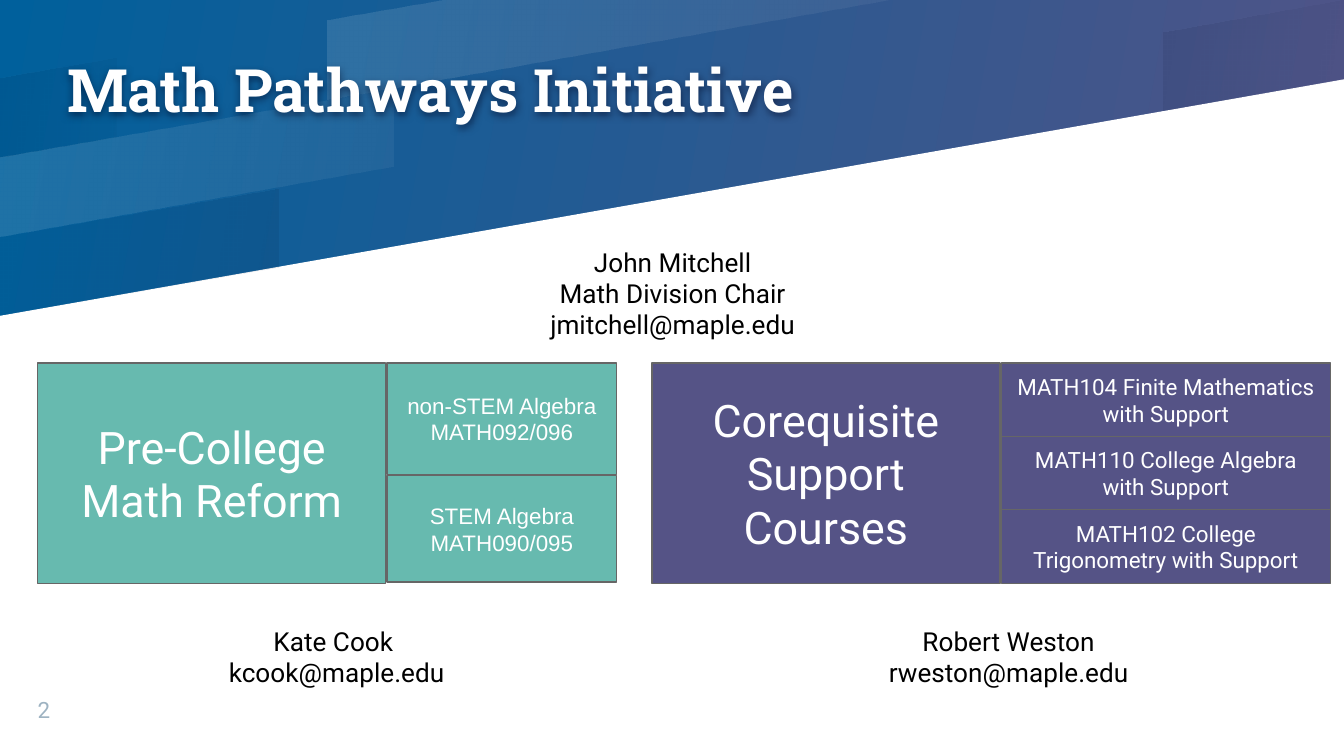
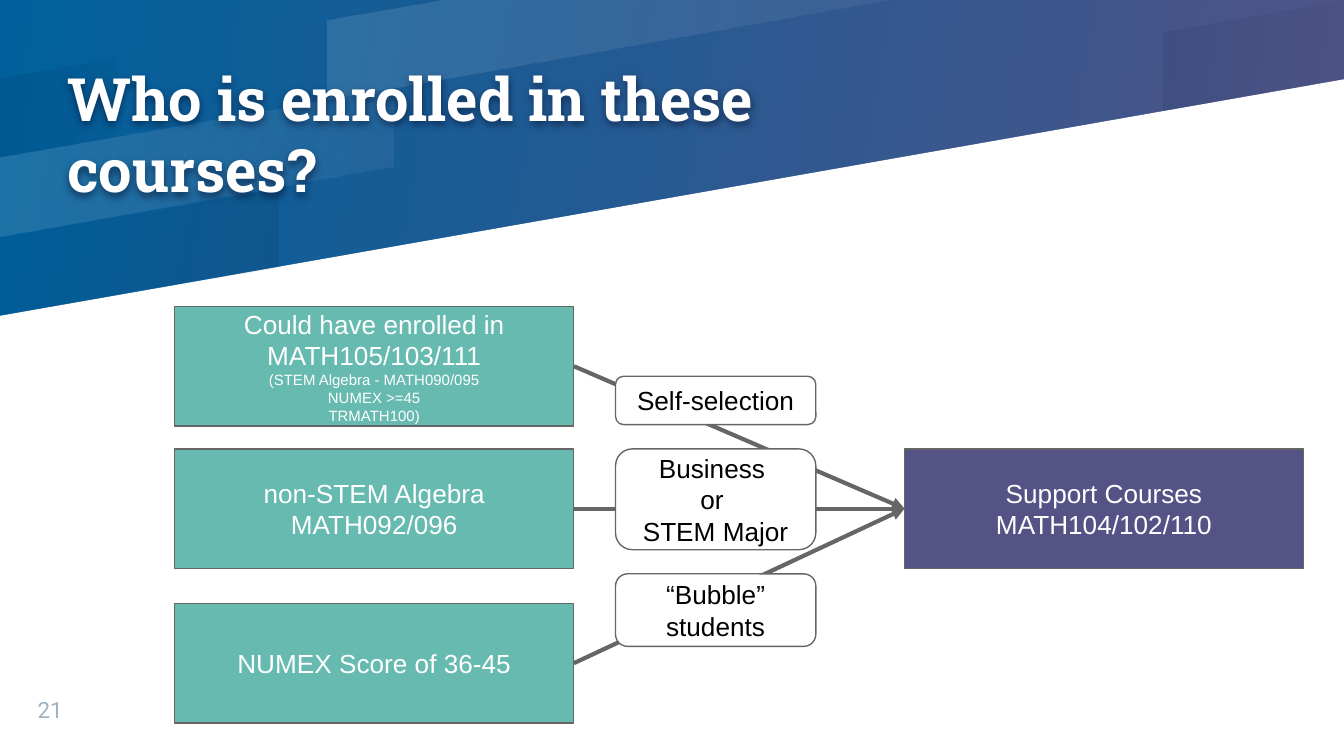
from lxml import etree
from pptx import Presentation
from pptx.dml.color import RGBColor
from pptx.enum.shapes import MSO_CONNECTOR, MSO_SHAPE
from pptx.enum.text import MSO_ANCHOR, MSO_AUTO_SIZE, PP_ALIGN
from pptx.oxml.ns import qn
from pptx.util import Inches, Pt

RECT = MSO_SHAPE.RECTANGLE
ROUND = MSO_SHAPE.ROUNDED_RECTANGLE
STRAIGHT = MSO_CONNECTOR.STRAIGHT
MIDDLE, BOTTOM = MSO_ANCHOR.MIDDLE, MSO_ANCHOR.BOTTOM
LEFT, CENTER = PP_ALIGN.LEFT, PP_ALIGN.CENTER
FIXED = MSO_AUTO_SIZE.NONE

WHITE = RGBColor(0xFF, 0xFF, 0xFF)
BLACK = RGBColor(0, 0, 0)
INK = RGBColor(0, 0, 0x1A)
BLUE = RGBColor(0x00, 0x60, 0x9C)
PURPLE = RGBColor(0x55, 0x53, 0x86)
TEAL = RGBColor(0x67, 0xBA, 0xAF)
GRAY = RGBColor(0x66, 0x66, 0x66)
PALE = RGBColor(0x9E, 0xB3, 0xC2)

SANS, SLAB, ARIAL = "Roboto", "Roboto Slab", "Arial"
WIDE = 10
HIGH = WIDE * 9 / 16
TILT = 350

PAGE = [(0, HIGH), (WIDE, HIGH), (WIDE, 0.59), (0, 2.35)]
BANDS = [
    ([(3.32, 0), (2.44, 0.15), (2.44, 0.74), (6.65, 0)], WHITE, (12, 5)),
    ([(0, 0.58), (0, 1.17), (0.87, 1.02), (0.87, 0.43)], INK, (8, 2)),
    ([(0, 1.76), (0, 2.35), (2.07, 1.99), (2.07, 1.4)], INK, (2, 8)),
    ([(10, 0), (9.99, 0), (8.66, 0.24), (8.66, 0.82), (10, 0.59)], INK, (8, 2)),
    ([(0, 1.17), (0, 1.76), (2.93, 1.24), (2.93, 0.66)], WHITE, (12, 5)),
]


def blend(fill, first, last):
    fill.gradient()
    fill.gradient_angle = TILT
    for stop, color in zip(fill.gradient_stops, (first, last)):
        stop.color.rgb = color


def outline(slide, points):
    spots = [(Inches(x), Inches(y)) for x, y in points]
    build = slide.shapes.build_freeform(*spots[0])
    build.add_line_segments(spots[1:], close=True)
    shape = build.convert_to_shape()
    shape.shadow.inherit = False
    shape.line.fill.background()
    return shape


def add_bands(slide):
    layout = slide.slide_layout
    blend(layout.background.fill, BLUE, PURPLE)
    page = outline(slide, PAGE)
    page.fill.solid()
    page.fill.fore_color.rgb = WHITE
    parts = [page]
    for points, color, alphas in BANDS:
        band = outline(slide, points)
        blend(band.fill, color, color)
        tints = band.element.spPr.iter(qn("a:srgbClr"))
        for tint, alpha in zip(tints, alphas):
            etree.SubElement(tint, qn("a:alpha"), val=str(alpha * 1000))
        parts.append(band)
    tree = layout.shapes.element
    for count, part in enumerate(parts):
        part.element.nvSpPr.cNvPr.id = 20 + count
        tree.insert(2 + count, part.element)


def place(shape, left, top, width, height):
    shape.left, shape.top = Inches(left), Inches(top)
    shape.width, shape.height = Inches(width), Inches(height)


def write(shape, text, size, font, color, align=CENTER, anchor=MIDDLE, inset=0.1):
    frame = shape.text_frame
    frame.text = text
    frame.word_wrap = True
    frame.auto_size = FIXED
    frame.vertical_anchor = anchor
    frame.margin_left = frame.margin_right = Inches(inset)
    frame.margin_top = frame.margin_bottom = Inches(inset)
    for para in frame.paragraphs:
        para.alignment = align
        for run in para.runs:
            run.font.size = Pt(size)
            run.font.name = font
            run.font.color.rgb = color


def add_title(slide, text, top):
    title = slide.shapes.title
    place(title, 0.5, top, 6, 1.98)
    write(title, text, 32, SLAB, WHITE, LEFT, inset=0)
    title.text_frame.paragraphs[0].runs[0].font.bold = True
    glow = etree.SubElement(title.element.spPr, qn("a:effectLst"))
    shade = etree.SubElement(glow, qn("a:outerShdw"), blurRad="57150",
                             dist="19050", dir="5400000")
    tint = etree.SubElement(shade, qn("a:srgbClr"), val=str(INK))
    etree.SubElement(tint, qn("a:alpha"), val="50000")


def add_text(slide, text, area, size=14, color=BLACK, **look):
    note = slide.shapes.add_textbox(*map(Inches, area))
    write(note, text, size, SANS, color, **look)


def add_box(slide, text, area, fill, size=14, font=ARIAL, color=WHITE, kind=RECT):
    box = slide.shapes.add_shape(kind, *map(Inches, area))
    box.shadow.inherit = False
    box.fill.solid()
    box.fill.fore_color.rgb = fill
    box.line.color.rgb = GRAY
    box.line.width = Pt(0.75)
    write(box, text, size, font, color)
    return box


def add_arrow(slide, start, end):
    arrow = slide.shapes.add_connector(STRAIGHT, 0, 0, 0, 0)
    arrow.begin_connect(start, 3)
    arrow.end_connect(end, 1)
    arrow.line.color.rgb = GRAY
    arrow.line.width = Pt(2.25)
    props = arrow.element.spPr
    etree.SubElement(props.find(qn("a:ln")), qn("a:tailEnd"), type="triangle")
    etree.SubElement(props, qn("a:effectLst"))


def add_slide(deck, title, top, number):
    slide = deck.slides.add_slide(deck.slide_layouts[5])
    add_title(slide, title, top)
    add_text(slide, number, (0.28, 5.11, 0.53, 0.27), 12, PALE,
             align=LEFT, anchor=BOTTOM, inset=0)
    return slide


def add_paths(deck):
    slide = add_slide(deck, "Math Pathways Initiative", -0.33, "2")
    add_bands(slide)
    top, tall = 2.7, 1.64
    add_box(slide, "Pre-College Math Reform", (0.28, top, 2.59, tall), TEAL, 24, SANS)
    add_box(slide, "Corequisite Support Courses", (4.85, top, 2.59, tall),
            PURPLE, 24, SANS)
    people = [
        ("Kate Cook \nkcook@maple.edu", (1.3, 4.58, 2.41, 0.61)),
        ("Robert Weston\nrweston@maple.edu", (6.3, 4.58, 2.41, 0.61)),
        ("John Mitchell\nMath Division Chair\njmitchell@maple.edu",
         (3.8, 1.76, 2.41, 0.84)),
    ]
    for text, area in people:
        add_text(slide, text, area)
    add_box(slide, "non-STEM Algebra\nMATH092/096", (2.88, top, 1.71, 0.83), TEAL, 12)
    add_box(slide, "STEM Algebra\nMATH090/095", (2.88, 3.54, 1.71, 0.79), TEAL, 12)
    courses = ["MATH104 Finite Mathematics", "MATH110 College Algebra",
               "MATH102 College Trigonometry"]
    step = tall / len(courses)
    for row, course in enumerate(courses):
        add_box(slide, course + " with Support", (7.45, top + row * step, 2.45, step),
                PURPLE, 12, SANS)


def add_flow(deck):
    slide = add_slide(deck, "Who is enrolled in these courses?", 0, "21")
    wide, tall = 2.97, 0.89
    goal = add_box(slide, "Support Courses\nMATH104/102/110",
                   (6.73, 3.34, wide, tall), PURPLE)
    groups = [
        ("Could have enrolled in MATH105/103/111\n(STEM Algebra - MATH090/095\n"
         "NUMEX >=45\vTRMATH100)", 2.28),
        ("non-STEM Algebra\nMATH092/096", 3.34),
        ("NUMEX Score of 36-45", 4.49),
    ]
    boxes = [add_box(slide, text, (1.3, top, wide, tall), TEAL) for text, top in groups]
    for para in boxes[0].text_frame.paragraphs[1:]:
        for run in para.runs:
            run.font.size = Pt(8)
    for box in boxes:
        add_arrow(slide, box, goal)
    reasons = [("Self-selection", 2.8, 0.36), ("Business \nor \nSTEM Major", 3.34, 0.75),
               ("“Bubble” students", 4.27, 0.54)]
    for text, top, high in reasons:
        add_box(slide, text, (4.58, top, 1.49, high), WHITE, color=BLACK, kind=ROUND)


def main():
    deck = Presentation()
    deck.slide_width, deck.slide_height = Inches(WIDE), Inches(HIGH)
    add_paths(deck)
    add_flow(deck)
    deck.save("out.pptx")


if __name__ == "__main__":
    main()
